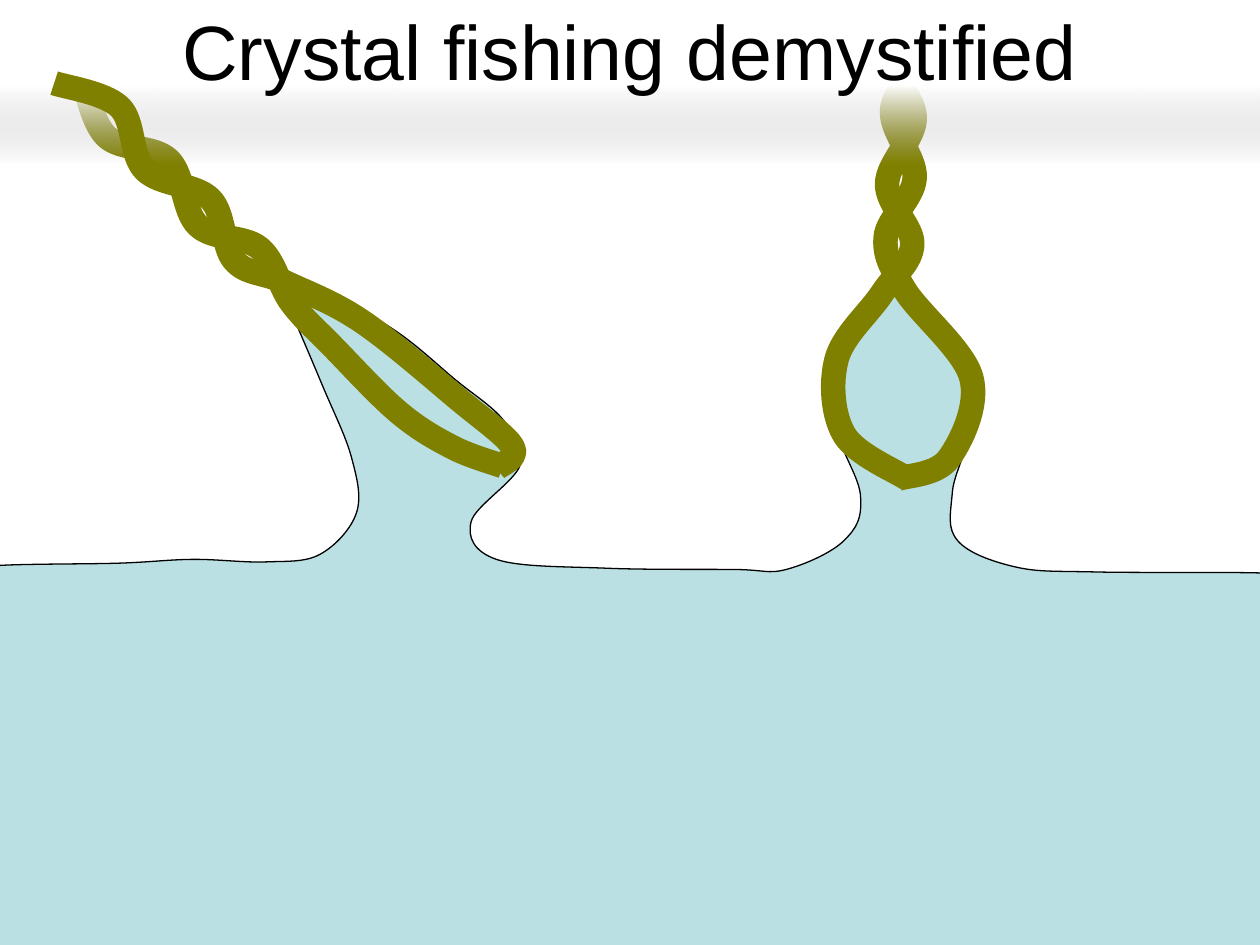
"""Draw the crystal fishing slide: loops on twisted ropes lifting a film of water."""
from dataclasses import dataclass

from pptx import Presentation
from pptx.dml.color import RGBColor as Rgb
from pptx.enum.shapes import MSO_SHAPE as Preset
from pptx.enum.text import MSO_ANCHOR as Anchor, PP_ALIGN as Align
from pptx.oxml.ns import qn
from pptx.oxml.xmlchemy import OxmlElement as Element
from pptx.util import Inches, Pt

COLUMNS, ROWS = 10, 7.5
CELL = Inches(1)
STEPS = 1000


@dataclass(frozen=True)
class Theme:
    font: str = "Arial"
    title_size: float = 44
    ink: str = "000000"
    paper: str = "FFFFFF"
    haze: str = "B6B6B6"
    water: str = "BBE0E3"
    rope: str = "808000"
    shore_width: float = 0.75
    rope_width: float = 14


THEME = Theme()

WATER = [
    (-0.03, 4.49), (0.94, 4.47), (1.53, 4.44), (2.11, 4.46), (2.54, 4.4),
    (2.83, 4.07), (2.79, 3.63), (2.56, 3.06), (2.23, 2.3), (2.1, 2.1),
    (2.16, 2.07), (2.24, 2.2), (2.64, 2.34), (3.16, 2.64), (3.61, 3.01),
    (4, 3.34), (4.13, 3.69), (3.74, 4.14), (3.94, 4.44), (4.81, 4.51),
    (5.83, 4.52), (6.24, 4.52), (6.7, 4.29), (6.83, 3.93), (6.61, 3.16),
    (7.07, 2.19), (7.7, 3.13), (7.56, 3.9), (7.6, 4.29), (8.06, 4.5),
    (8.7, 4.54), (10.07, 4.55), (10.26, 4.61), (10.38, 8.11), (10.17, 9.57),
    (-0.16, 9.57), (-0.22, 8.37), (-0.22, 8.28), (-0.26, 4.74), (-0.23, 4.56),
]
TILTED_BACK = [
    (3.99, 3.7), (3.59, 3.55), (3.16, 3.27), (2.63, 2.74), (2.31, 2.4),
    (2.06, 1.97), (1.57, 1.79), (1.34, 1.27), (0.84, 1.08), (0.64, 0.56),
]
TILTED_FRONT = [
    (3.94, 3.72), (4.07, 3.55), (3.64, 3.17), (2.87, 2.55), (2.26, 2.24),
    (1.86, 2.07), (1.67, 1.58), (1.15, 1.35), (0.95, 0.85), (0.43, 0.66),
]
UPRIGHT_RIGHT = [
    (7.13, 3.8), (7.53, 3.64), (7.71, 3), (7.18, 2.3), (7.03, 1.88),
    (7.26, 1.41), (7.08, 0.88), (7.31, 0.39), (7.1, -0.12),
]
UPRIGHT_LEFT = [
    (7.2, 3.8), (6.7, 3.45), (6.64, 2.85), (7, 2.33), (7.24, 1.94),
    (7.04, 1.46), (7.26, 0.94), (7.06, 0.44), (7.31, -0.06),
]


def color(name):
    """Return the theme colour called name."""
    return Rgb.from_string(getattr(THEME, name))


def spline(anchors, closed):
    """Return Bezier points of a smooth curve, three for each span."""
    if closed:
        padded = [anchors[-1], *anchors, *anchors[:2]]
    else:
        padded = [anchors[0], *anchors, anchors[-1]]
    points = []
    for before, start, end, after in zip(padded, padded[1:], padded[2:], padded[3:]):
        points.append(tuple(s + (e - b) / 6 for b, s, e in zip(before, start, end)))
        points.append(tuple(e - (a - s) / 6 for s, e, a in zip(start, end, after)))
        points.append(end)
    return points


def add_curve(page, anchors, line, width, fill=None):
    """Add a smooth curve through anchors, closed when it has a fill."""
    closed = fill is not None
    points = [(x * STEPS, y * STEPS) for x, y in spline(anchors, closed)]
    left, top = anchors[0]
    builder = page.shapes.build_freeform(left * STEPS, top * STEPS, CELL / STEPS)
    builder.add_line_segments(points, close=closed)
    curve = builder.convert_to_shape()
    lines = list(curve.element.iter(qn("a:lnTo")))
    for first, second, third in zip(lines[::3], lines[1::3], lines[2::3]):
        bezier = Element("a:cubicBezTo")
        first.addprevious(bezier)
        for segment in (first, second, third):
            bezier.append(segment[0])
            segment.getparent().remove(segment)
    curve.shadow.inherit = False
    curve.line.color.rgb = color(line)
    curve.line.width = Pt(width)
    if closed:
        curve.fill.solid()
        curve.fill.fore_color.rgb = color(fill)
    else:
        curve.fill.background()


def add_rope(page, anchors):
    """Add one strand of rope."""
    add_curve(page, anchors, "rope", THEME.rope_width)


def add_band(page, top, height, fill, fade_to=None):
    """Add a full-width band, fading downwards to a clear colour if one is given."""
    band = page.shapes.add_shape(
        Preset.RECTANGLE, 0, round(top * CELL), COLUMNS * CELL, round(height * CELL))
    band.shadow.inherit = False
    band.line.fill.background()
    if fade_to is None:
        band.fill.solid()
        band.fill.fore_color.rgb = color(fill)
        return
    band.fill.gradient()
    band.fill.gradient_angle = 270
    for stop, name, position in zip(band.fill.gradient_stops, (fill, fade_to), (0, 1)):
        stop.color.rgb = color(name)
        stop.position = position
    alpha = Element("a:alpha")
    alpha.set("val", "0")
    list(band.element.iter(qn("a:srgbClr")))[-1].append(alpha)


def add_text(page, text, *, left, top, width, height, size, ink, align):
    """Add a wrapped, vertically centred line of text."""
    box = page.shapes.add_textbox(*(round(n * CELL) for n in (left, top, width, height)))
    frame = box.text_frame
    frame.word_wrap = True
    frame.vertical_anchor = Anchor.MIDDLE
    para = frame.paragraphs[0]
    para.alignment = align
    span = para.add_run()
    span.text = text
    span.font.name = THEME.font
    span.font.size = Pt(size)
    span.font.color.rgb = color(ink)


def main():
    """Build the slide and save it."""
    deck = Presentation()
    deck.slide_width, deck.slide_height = COLUMNS * CELL, round(ROWS * CELL)
    page = deck.slides.add_slide(deck.slide_layouts[6])
    add_curve(page, WATER, "ink", THEME.shore_width, fill="water")
    for strand in (TILTED_BACK, UPRIGHT_RIGHT, UPRIGHT_LEFT):
        add_rope(page, strand)
    add_band(page, 0.68, 0.62, "paper", fade_to="haze")
    add_band(page, 0, 0.68, "paper")
    add_text(page, "Crystal fishing demystified", left=0.5, top=-0.23, width=9,
             height=1.25, size=THEME.title_size, ink="ink", align=Align.CENTER)
    add_rope(page, TILTED_FRONT)
    deck.save("out.pptx")


if __name__ == "__main__":
    main()
